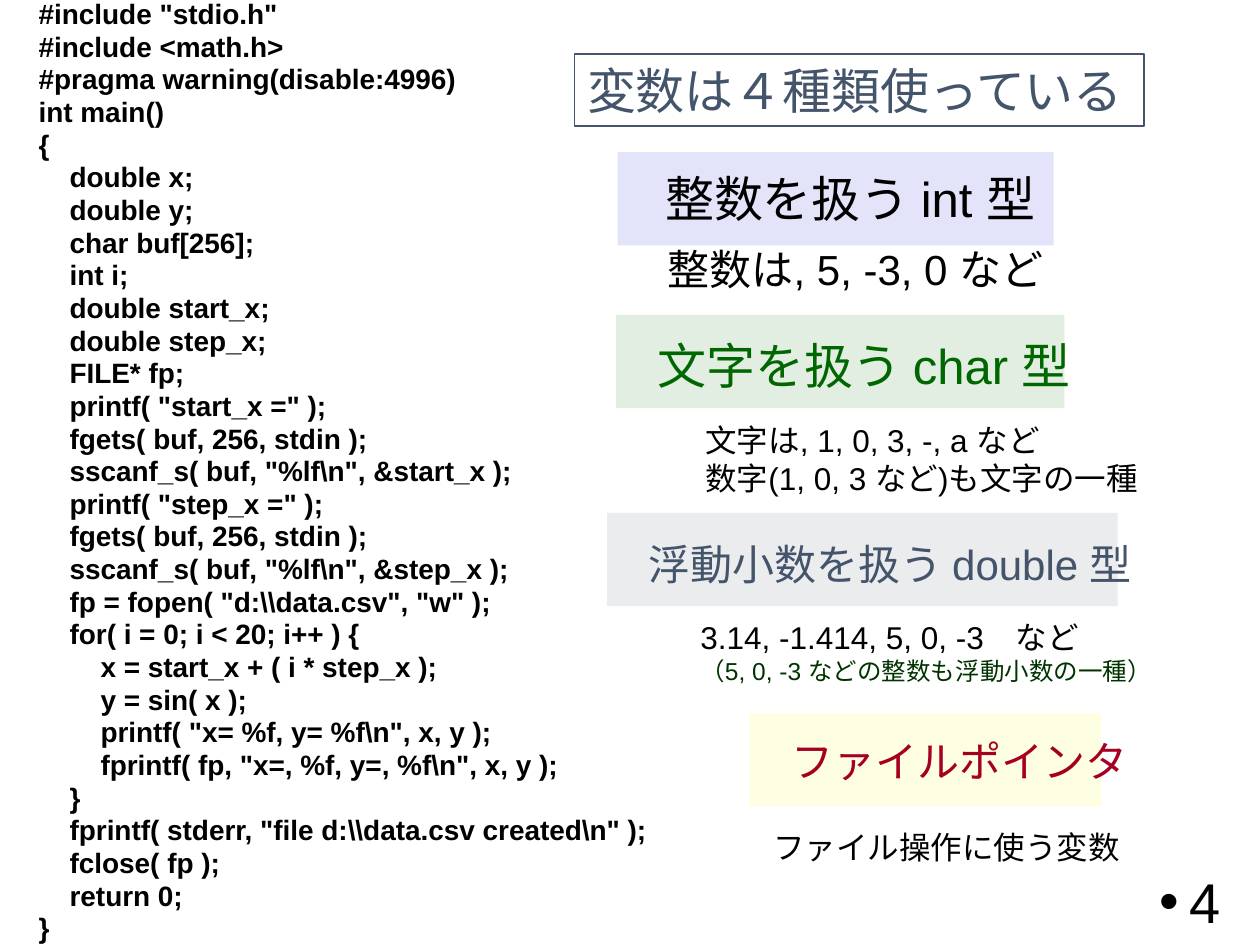
from lxml import etree
from pptx import Presentation
from pptx.dml.color import RGBColor
from pptx.enum import shapes, text
from pptx.oxml import ns
from pptx.util import Cm, Pt

THEME = {
    "font": "Arial",
    "black": "000000", "blue": "0000CC", "green": "006600", "deep green": "003300",
    "slate": "44546A", "red": "A50021", "yellow": "F8FE02",
    "number": 32, "large": 28, "medium": 24, "body": 18, "code": 16, "small": 14,
    "panel alpha": 11,
}

TITLE = "変数は４種類使っている"
PAGE_NUMBER = "4"
PANEL_HEIGHT = 1.88

CODE = r"""#include "stdio.h"
#include <math.h>
#pragma warning(disable:4996)
int main()
{
    double x;
    double y;
    char buf[256];
    int i;
    double start_x;
    double step_x;
    FILE* fp;
    printf( "start_x =" );
    fgets( buf, 256, stdin );
    sscanf_s( buf, "%lf\n", &start_x );
    printf( "step_x =" );
    fgets( buf, 256, stdin );
    sscanf_s( buf, "%lf\n", &step_x );
    fp = fopen( "d:\\data.csv", "w" );
    for( i = 0; i < 20; i++ ) {
        x = start_x + ( i * step_x );
        y = sin( x );
        printf( "x= %f, y= %f\n", x, y );
        fprintf( fp, "x=, %f, y=, %f\n", x, y );
    }
    fprintf( stderr, "file d:\\data.csv created\n" );
    fclose( fp );
    return 0;
}"""

# Panel: left, top, width. Text areas: left, top, width, height. All in cm.
# Each line of text: wording, size, colour.
VARIABLE_TYPES = [
    {"panel": (12.45, 3.07, 8.79), "tint": "blue",
     "heading": ("整数を扱う int 型", "large", "black"),
     "heading area": (13.16, 3.28, 8.1, 1.45),
     "notes": [("整数は, 5, -3, 0 など", "medium", "black")],
     "notes area": (13.21, 4.78, 8.15, 1.27)},
    {"panel": (12.42, 6.35, 9.04), "tint": "green",
     "heading": ("文字を扱う char 型", "large", "green"),
     "heading area": (13, 6.63, 8.99, 1.45),
     "notes": [("文字は, 1, 0, 3, -, a など", "body", "black"),
               ("数字(1, 0, 3 など)も文字の一種", "body", "black")],
     "notes area": (13.97, 8.36, 9.32, 1.8)},
    {"panel": (12.24, 10.34, 10.29), "tint": "slate",
     "heading": ("浮動小数を扱う double 型", "medium", "slate"),
     "heading area": (12.83, 10.74, 10.39, 1.27),
     "notes": [("3.14, -1.414, 5, 0, -3　など", "body", "black"),
               ("（5, 0, -3 などの整数も浮動小数の一種）", "small", "deep green")],
     "notes area": (13.87, 12.34, 9.68, 1.63)},
    {"panel": (15.11, 14.38, 7.09), "tint": "yellow",
     "heading": ("ファイルポインタ", "medium", "red"),
     "heading area": (15.7, 14.71, 7.34, 1.27),
     "notes": [("ファイル操作に使う変数", "body", "black")],
     "notes area": (15.34, 16.56, 7.57, 1.02)},
]


def color(name):
    return RGBColor.from_string(THEME[name])


def apply(target, values):
    for name, value in values.items():
        setattr(target, name, value)


def write(box, lines, wrap=False, anchor=text.MSO_ANCHOR.TOP, bold=False, **paragraph_format):
    frame = box.text_frame
    apply(frame, {"word_wrap": wrap, "vertical_anchor": anchor,
                  "auto_size": text.MSO_AUTO_SIZE.NONE})
    for index, (wording, size, tone) in enumerate(lines):
        para = frame.add_paragraph() if index else frame.paragraphs[0]
        apply(para, paragraph_format)
        if index == 0:
            para.space_before = Pt(0)
        span = para.add_run()
        span.text = wording
        apply(span.font, {"name": THEME["font"], "size": Pt(THEME[size]), "bold": bold})
        span.font.color.rgb = color(tone)
    return box


def add_text(page, area, lines, **options):
    return write(page.shapes.add_textbox(*map(Cm, area)), lines, **options)


def add_panel(page, area, tint):
    """Add a borderless, mostly transparent rectangle."""
    panel = page.shapes.add_shape(shapes.MSO_SHAPE.RECTANGLE, *map(Cm, area))
    panel.shadow.inherit = False
    panel.line.fill.background()
    panel.fill.solid()
    panel.fill.fore_color.rgb = color(tint)
    tone = panel.fill._xPr.find(".//" + ns.qn("a:srgbClr"))
    etree.SubElement(tone, ns.qn("a:alpha"), val=str(THEME["panel alpha"] * 1000))


def add_bullet(para, indent):
    properties = para._p.get_or_add_pPr()
    properties.set("marL", str(indent))
    properties.set("indent", str(-indent))
    etree.SubElement(properties, ns.qn("a:buFont"), typeface=THEME["font"])
    etree.SubElement(properties, ns.qn("a:buChar"), char="•")


def main():
    deck = Presentation()
    apply(deck, {"slide_width": Cm(25.4), "slide_height": Cm(19.05)})
    page = deck.slides.add_slide(deck.slide_layouts[5])

    title = page.shapes.title
    apply(title, {"left": Cm(11.58), "top": Cm(1.09), "width": Cm(11.48), "height": Cm(1.45)})
    write(title, [(TITLE, "large", "slate")], alignment=text.PP_ALIGN.LEFT)
    title.line.color.rgb = color("slate")
    title.line.width = Pt(0.75)

    add_text(page, (0.53, 0.13, 23.5, 14.81),
             [(line, "code", "black") for line in CODE.splitlines()],
             wrap=True, bold=True, line_spacing=0.45, space_before=Pt(10))

    for kind in VARIABLE_TYPES:
        add_panel(page, (*kind["panel"], PANEL_HEIGHT), kind["tint"])
        add_text(page, kind["heading area"], [kind["heading"]])
        add_text(page, kind["notes area"], kind["notes"])

    number = add_text(page, (19.13, 17.65, 5.72, 1.02), [(PAGE_NUMBER, "number", "black")],
                      wrap=True, anchor=text.MSO_ANCHOR.MIDDLE, alignment=text.PP_ALIGN.RIGHT)
    add_bullet(number.text_frame.paragraphs[0], Cm(0.6))

    deck.save("out.pptx")


if __name__ == "__main__":
    main()
